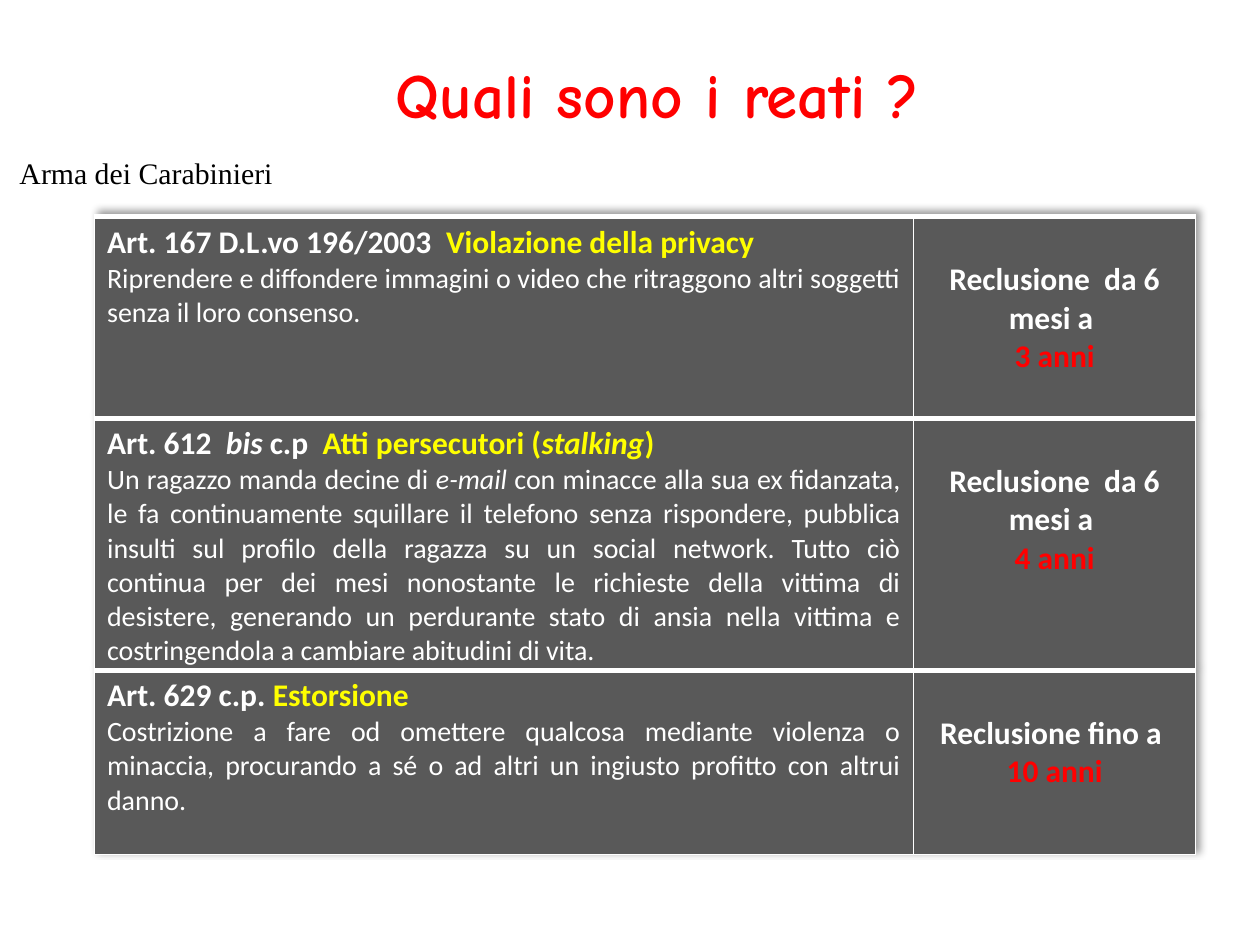
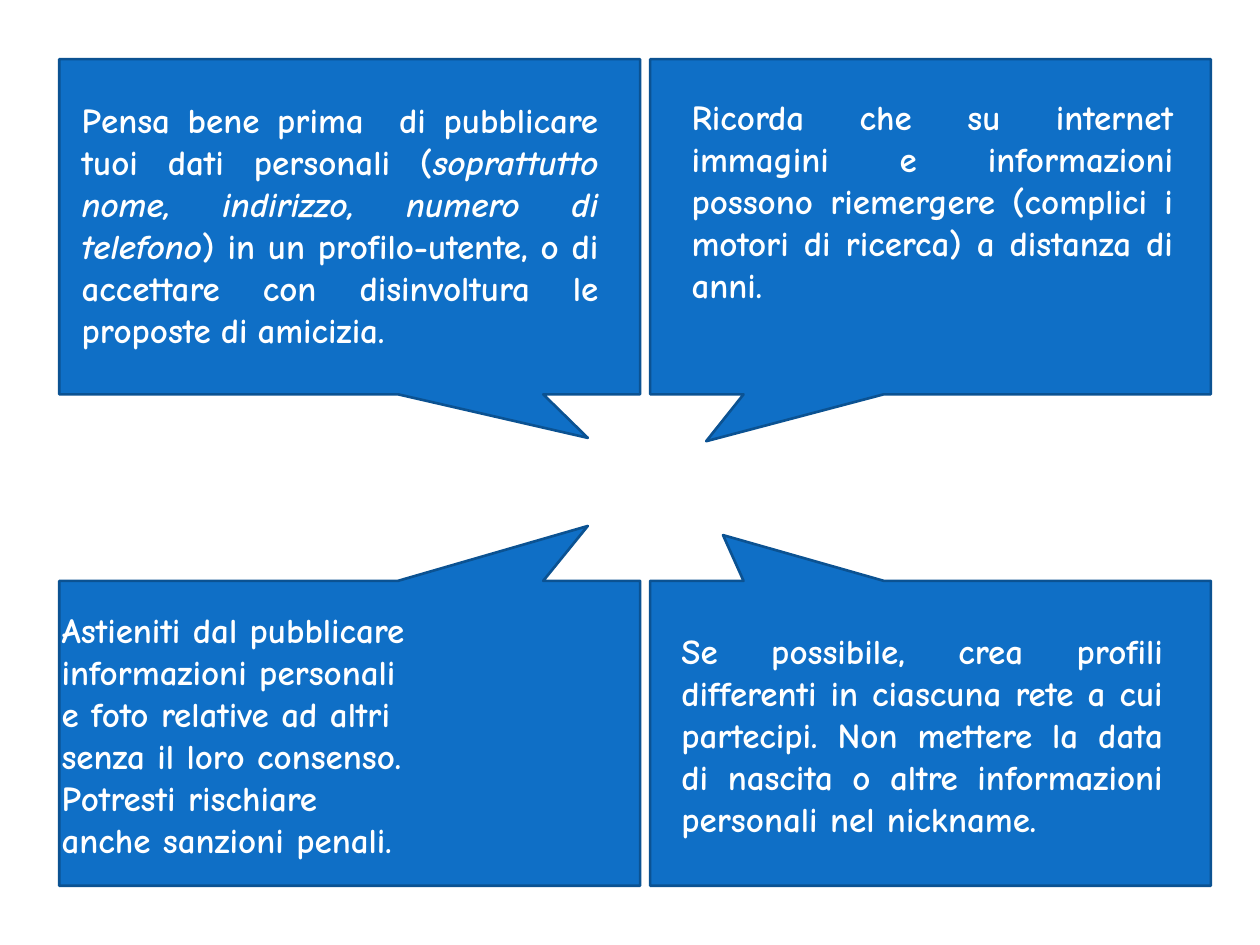
from lxml import etree
from pptx import Presentation
from pptx.dml.color import RGBColor
from pptx.enum.shapes import MSO_SHAPE
from pptx.enum.text import MSO_ANCHOR, MSO_AUTO_SIZE, PP_ALIGN
from pptx.oxml import parse_xml
from pptx.oxml.ns import nsdecls
from pptx.util import Inches, Pt

LEFT, MID, JUST = PP_ALIGN.LEFT, PP_ALIGN.CENTER, PP_ALIGN.JUSTIFY
WEDGE = MSO_SHAPE.RECTANGULAR_CALLOUT
MIDDLE, GROW = MSO_ANCHOR.MIDDLE, MSO_AUTO_SIZE.SHAPE_TO_FIT_TEXT

WHITE, BLACK, RED, YELLOW = "FFFFFF", "000000", "FF0000", "FFFF00"
GREY, BLUE, NAVY = "595959", "0F6FC6", "0B5292"

# Run styles: font, size, colour, bold, italic
STYLES = {
    "title": ("Comic Neue", 36, RED, True, False),
    "force": ("Times New Roman", 17, BLACK, False, False),
    "head": ("Calibri", 18, WHITE, True, False),
    "head_it": ("Calibri", 18, WHITE, True, True),
    "crime": ("Calibri", 18, YELLOW, True, False),
    "crime_it": ("Calibri", 18, YELLOW, True, True),
    "years": ("Calibri", 18, RED, True, False),
    "body": ("Calibri", 16, WHITE, False, False),
    "body_it": ("Calibri", 16, WHITE, False, True),
    "tip": ("Comic Neue", 20, WHITE, True, False),
    "tip_it": ("Comic Neue", 20, WHITE, True, True),
    "tip_gap": ("Comic Neue", 16, WHITE, True, False),
}

# Each text is a list of paragraphs: (alignment, [(style, words), ...])
TITLE = [(MID, [("title", "Quali sono i reati ?")])]
FORCE = [(MID, [("force", "Arma dei Carabinieri")])]

# Row height, offence, penalty
CRIMES = [
    (1.6,
     [(LEFT, [("head", "Art. 167 D.L.vo 196/2003  "),
              ("crime", "Violazione della privacy")]),
      (JUST, [("body", "Riprendere e diffondere immagini o video che ritraggono "
                       "altri soggetti senza il loro consenso.")])],
     [(MID, [("head", "Reclusione  da 6 mesi a ")]),
      (MID, [("years", "3 anni")])]),
    (2.0,
     [(JUST, [("head", "Art. 612  "), ("head_it", "bis "), ("head", "c.p  "),
              ("crime", "Atti persecutori ("), ("crime_it", "stalking"),
              ("crime", ")")]),
      (JUST, [("body", "Un ragazzo manda decine di "), ("body_it", "e-mail "),
              ("body", "con minacce alla sua ex fidanzata, le fa continuamente "
                       "squillare il telefono senza rispondere, pubblica insulti "
                       "sul profilo della ragazza su un social network. Tutto ciò "
                       "continua per dei mesi nonostante le richieste della "
                       "vittima di desistere, generando un perdurante stato di "
                       "ansia nella vittima e costringendola a cambiare abitudini "
                       "di vita.")])],
     [(MID, [("head", "Reclusione  da 6 mesi a ")]),
      (MID, [("years", "4 anni")])]),
    (1.46,
     [(LEFT, [("head", "Art. 629 c.p. "), ("crime", "Estorsione")]),
      (JUST, [("body", "Costrizione a fare od omettere qualcosa mediante violenza "
                       "o minaccia, procurando a sé o ad altri un ingiusto "
                       "profitto con altrui danno.")])],
     [(MID, [("head", "Reclusione fino a  "), ("years", "10 anni")])]),
]

# Column, row, pointer tip, text box, text
TIPS = [
    (0, 0, (0.41, 0.63), (0.55, 0.55, 4.3, 2.46),
     [(JUST, [("tip", "Pensa bene prima  di pubblicare tuoi dati personali ("),
              ("tip_it", "soprattutto nome, indirizzo, numero di telefono"),
              ("tip", ") in un profilo-utente, o di accettare con disinvoltura "
                      "le proposte"),
              ("tip_gap", " "), ("tip", "di"),
              ("tip_gap", " "), ("tip", "amicizia.")])]),
    (1, 0, (-0.4, 0.64), (5.39, 0.7, 4.02, 1.78),
     [(JUST, [("tip", "Ricorda che su internet immagini e informazioni possono "
                      "riemergere (complici i motori di ricerca) a distanza di "
                      "anni.")])]),
    (0, 1, (0.41, -0.68), (0.39, 4.77, 4.65, 2.12),
     [(JUST, [("tip", line)]) for line in (
         "Astieniti dal pubblicare", "informazioni personali",
         "e foto relative ad altri", "senza il loro consenso.",
         "Potresti rischiare", "anche sanzioni penali.")]),
    (1, 1, (-0.37, -0.65), (5.31, 4.77, 4.02, 2.12),
     [(JUST, [("tip", "Se possibile, crea profili differenti in ciascuna rete a "
                      "cui partecipi. Non mettere la data di nascita o altre "
                      "informazioni personali nel nickname.")])]),
]
COLS = [(0.47, 4.61), (5.16, 4.45)]  # left, width
ROWS = [(0.47, 2.66), (4.61, 2.42)]  # top, height


def rgb(code):
    return RGBColor.from_string(code)


def inch(*vals):
    return [Inches(v) for v in vals]


def put(obj, fmt):
    for key, val in fmt.items():
        setattr(obj, key, val)


def write(frame, paras, **fmt):
    """Fill a text frame with styled paragraphs."""
    put(frame, fmt)
    for n, (align, runs) in enumerate(paras):
        para = frame.add_paragraph() if n else frame.paragraphs[0]
        para.alignment = align
        for style, words in runs:
            run = para.add_run()
            run.text = words
            name, size, tone, bold, slant = STYLES[style]
            put(run.font, dict(name=name, size=Pt(size), bold=bold, italic=slant))
            run.font.color.rgb = rgb(tone)


def add_text(slide, box, paras, **fmt):
    frame = slide.shapes.add_textbox(*inch(*box)).text_frame
    write(frame, paras, **{"word_wrap": True, **fmt})
    return frame


def edge(cell, **widths):
    """Draw white cell borders; widths in points by side L, R, T, B."""
    props = cell._tc.get_or_add_tcPr()
    for n, (side, width) in enumerate(widths.items()):
        line = etree.fromstring(
            f'<a:ln{side} {nsdecls("a")} w="{Pt(width)}"><a:solidFill>'
            f'<a:srgbClr val="{WHITE}"/></a:solidFill></a:ln{side}>')
        props.insert(n, line)


def shade(table):
    """Cast a soft shadow up and to the right."""
    table._tbl.tblPr.insert(0, parse_xml(
        f'<a:effectLst {nsdecls("a")}><a:outerShdw blurRad="50800" dist="38100" '
        'dir="18900000" algn="bl" rotWithShape="0"><a:prstClr val="black">'
        '<a:alpha val="40000"/></a:prstClr></a:outerShdw></a:effectLst>'))


def crimes(slide):
    add_text(slide, (2.72, 0.39, 5, 0.71), TITLE, word_wrap=False, auto_size=GROW)
    high = sum(row[0] for row in CRIMES)
    table = slide.shapes.add_table(
        len(CRIMES), 2, *inch(0.75, 1.72, 8.74, high)).table
    put(table, dict(first_row=False, horz_banding=False))
    shade(table)
    for col, wide in zip(table.columns, (6.5, 2.24)):
        col.width = Inches(wide)
    for r, (tall, *texts) in enumerate(CRIMES):
        table.rows[r].height = Inches(tall)
        for c, (paras, top) in enumerate(zip(texts, (0.05, 0.35))):
            cell = table.cell(r, c)
            put(cell, dict(margin_top=Inches(top), margin_bottom=0))
            cell.fill.solid()
            cell.fill.fore_color.rgb = rgb(GREY)
            edge(cell, L=1, R=1, T=3, B=1 if r == len(CRIMES) - 1 else 3)
            write(cell.text_frame, paras)
    force = add_text(slide, (0, 1.15, 2.32, 0.47), FORCE, vertical_anchor=MIDDLE)
    force.paragraphs[0].line_spacing = 0.9


def tips(slide):
    for col, row, tip, _, _ in reversed(TIPS):
        (x, w), (y, h) = COLS[col], ROWS[row]
        wedge = slide.shapes.add_shape(WEDGE, *inch(x, y, w, h))
        wedge.adjustments[0], wedge.adjustments[1] = tip
        wedge.shadow.inherit = False
        wedge.fill.solid()
        wedge.fill.fore_color.rgb = rgb(BLUE)
        wedge.line.color.rgb = rgb(NAVY)
        wedge.line.width = Pt(1.5)
    for *_, box, paras in TIPS:
        add_text(slide, box, paras, vertical_anchor=MIDDLE, auto_size=GROW)


def main():
    deck = Presentation()
    put(deck, dict(slide_width=Inches(10), slide_height=Inches(7.5)))
    for build in (crimes, tips):
        build(deck.slides.add_slide(deck.slide_layouts[6]))
    deck.save("out.pptx")


if __name__ == "__main__":
    main()
